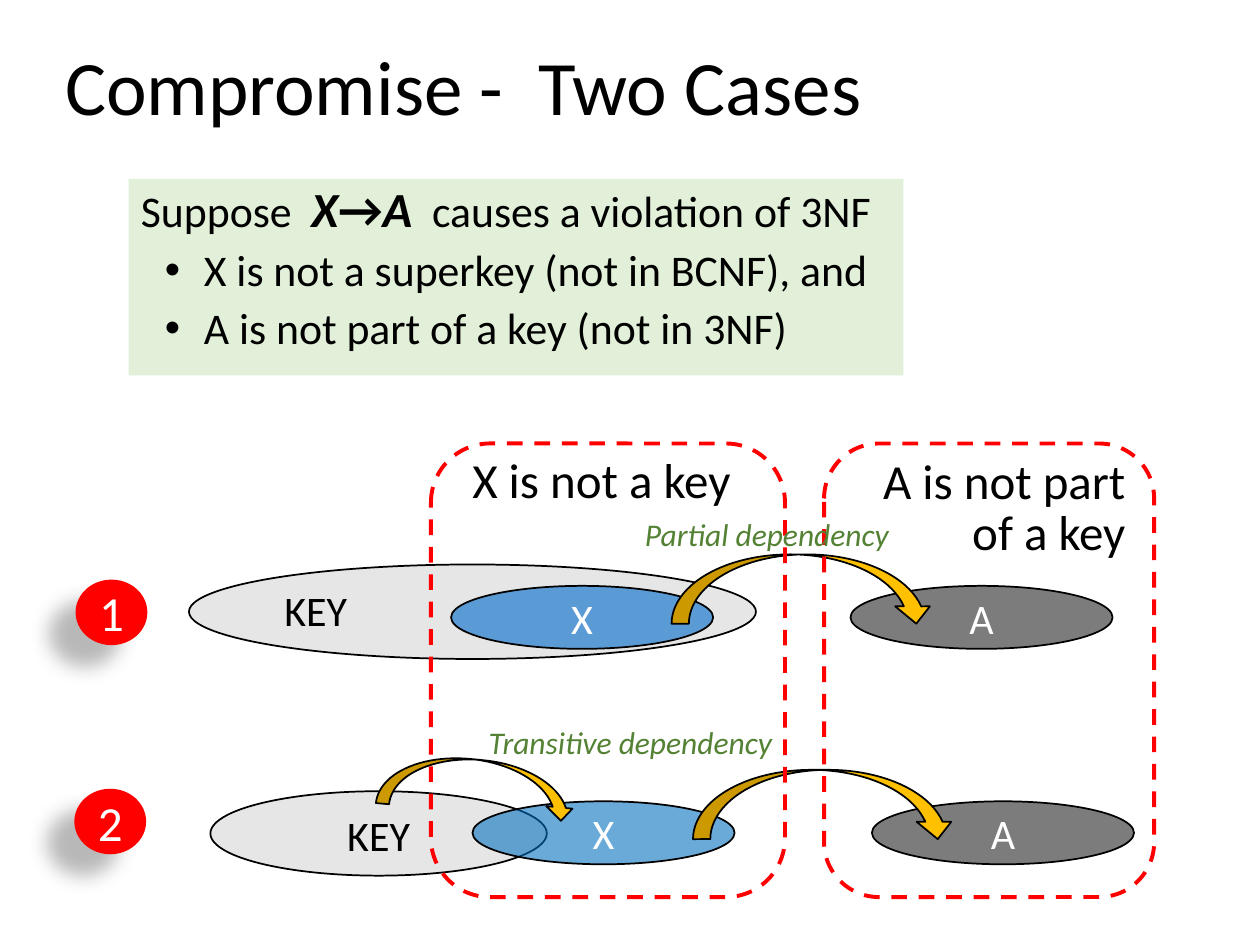
from dataclasses import dataclass

from lxml.etree import SubElement
from pptx import Presentation
from pptx.dml.color import RGBColor
from pptx.enum.dml import MSO_LINE
from pptx.enum.shapes import MSO_SHAPE
from pptx.enum.text import MSO_ANCHOR, PP_ALIGN
from pptx.oxml.ns import qn
from pptx.util import Inches, Pt


@dataclass(frozen=True)
class Theme:
    font: str = "Calibri"
    black: str = "000000"
    white: str = "FFFFFF"
    red: str = "FF0000"
    key: str = "E7E6E6"
    partial: str = "5B9BD5"
    transitive: str = "0070C0"
    attribute: str = "7C7C7C"
    arrow: str = "FFC000"
    panel: str = "E2F0D9"
    label: str = "548235"
    title_size: int = 44
    heading_size: int = 28
    body_size: int = 25
    node_size: int = 24
    label_size: int = 18


THEME = Theme()
TITLE = "Compromise -  Two Cases"
FORMULA = {"size": THEME.heading_size, "bold": True}
SUPPOSITION = [
    ("Suppose  ", {}),
    ("X", {**FORMULA, "italic": True}),
    ("→", FORMULA),
    ("A", {**FORMULA, "italic": True}),
    ("  ", {"italic": True}),
    ("causes a violation of 3NF", {}),
]
CONDITIONS = ["X is not a superkey (not in BCNF), and", "A is not part of a key (not in 3NF)"]
CASES = [
    {
        "number": "1",
        "badge": (0.6, 4.6),
        "key": (1.5, 4.48, 4.5, 0.75),
        "key_align": PP_ALIGN.LEFT,
        "fill": THEME.partial,
        "opacity": 100,
        "label": ("Partial dependency", (5.02, 4.04, 2.21, 0.4)),
        "key_arrow": None,
    },
    {
        "number": "2",
        "badge": (0.59, 6.26),
        "key": (1.67, 6.28, 2.67, 0.67),
        "key_align": PP_ALIGN.CENTER,
        "fill": THEME.transitive,
        "opacity": 59,
        "label": ("Transitive dependency", (3.78, 5.69, 2.48, 0.4)),
        "key_arrow": (3, 6.03, 1.58, 0.42),
    },
]
FRAMES = [
    {"box": (3.42, 3.52, 2.81, 3.6), "text": "X is not a key", "text_box": (3.65, 3.52, 2.27, 0.57),
     "format": {"wrap": False}},
    {"box": (6.54, 3.52, 2.62, 3.6), "text": "A is not part of a key", "text_box": (6.87, 3.59, 2.16, 0.92),
     "format": {"align": PP_ALIGN.RIGHT, "line_spacing": Pt(29)}},
]
NODE_LEFT, NODE_TOP = 3.58, 4.65
NODE_SIZE = (2.08, 0.5)
ARROW_SIZE = (2.08, 0.55)
ATTRIBUTE_STEP = 3.17
ARROW_SHIFT = (1.75, -0.25)
CASE_SHIFT = (0.17, 1.71)
BADGE_SIZE = (0.57, 0.52)


def write_text(shape, paragraphs, size=THEME.node_size, color=THEME.black, italic=False,
               align=PP_ALIGN.LEFT, anchor=MSO_ANCHOR.TOP, wrap=True, line_spacing=1.0, space_before=0):
    frame = shape.text_frame
    frame.word_wrap = wrap
    frame.vertical_anchor = anchor
    for index, runs in enumerate(paragraphs):
        paragraph = frame.paragraphs[0] if index == 0 else frame.add_paragraph()
        paragraph.alignment = align
        paragraph.line_spacing = line_spacing
        paragraph.space_before = Pt(space_before)
        for text, style in runs:
            run = paragraph.add_run()
            run.text = text
            run.font.name = THEME.font
            run.font.size = Pt(style.get("size", size))
            run.font.bold = style.get("bold", False)
            run.font.italic = style.get("italic", italic)
            run.font.color.rgb = RGBColor.from_string(color)


def plain(text):
    return [[(text, {})]]


def add_box(slide, box, text, **text_format):
    shape = slide.shapes.add_textbox(*map(Inches, box))
    write_text(shape, plain(text), **text_format)


def add_figure(slide, kind, box, fill=None, line=THEME.black, width=1, opacity=100):
    shape = slide.shapes.add_shape(kind, *map(Inches, box))
    shape.shadow.inherit = False
    if fill:
        shape.fill.solid()
        shape.fill.fore_color.rgb = RGBColor.from_string(fill)
    else:
        shape.fill.background()
    if opacity < 100:
        color = shape.fill._xPr.find(qn("a:solidFill"))[0]
        SubElement(color, qn("a:alpha"), val=str(opacity * 1000))
    if line:
        shape.line.color.rgb = RGBColor.from_string(line)
        shape.line.width = Pt(width)
    else:
        shape.line.fill.background()
    return shape


def add_arrow(slide, box, rotation=0):
    arrow = add_figure(slide, MSO_SHAPE.CURVED_DOWN_ARROW, box, THEME.arrow)
    for index, value in enumerate((0.25, 0.5, 0.25)):
        arrow.adjustments[index] = value
    arrow.rotation = rotation


def add_case(slide, case, index):
    left = NODE_LEFT + index * CASE_SHIFT[0]
    top = NODE_TOP + index * CASE_SHIFT[1]
    key = add_figure(slide, MSO_SHAPE.OVAL, case["key"], THEME.key)
    write_text(key, plain("KEY"), align=case["key_align"])
    nodes = [("X", left, case["fill"], case["opacity"]),
             ("A", left + ATTRIBUTE_STEP, THEME.attribute, 100)]
    for name, node_left, fill, opacity in nodes:
        node = add_figure(slide, MSO_SHAPE.OVAL, (node_left, top, *NODE_SIZE), fill, opacity=opacity)
        write_text(node, plain(name), color=THEME.white, align=PP_ALIGN.CENTER, anchor=MSO_ANCHOR.MIDDLE)
    add_arrow(slide, (left + ARROW_SHIFT[0], top + ARROW_SHIFT[1], *ARROW_SIZE))
    if case["key_arrow"]:
        add_arrow(slide, case["key_arrow"], 5.5)


def add_badge(slide, case):
    badge = add_figure(slide, MSO_SHAPE.OVAL, (*case["badge"], *BADGE_SIZE), THEME.red, line=None)
    write_text(badge, plain(case["number"]), size=THEME.heading_size, color=THEME.white,
               align=PP_ALIGN.CENTER, anchor=MSO_ANCHOR.MIDDLE, wrap=False)
    effects = badge._element.spPr.find(qn("a:effectLst"))
    shadow = SubElement(effects, qn("a:outerShdw"), blurRad=str(Pt(11.8)), dist=str(Pt(19.7)),
                        dir=str(141 * 60000), algn="ctr", rotWithShape="0")
    color = SubElement(shadow, qn("a:srgbClr"), val=THEME.black)
    SubElement(color, qn("a:alpha"), val="28000")


def add_panel(slide):
    panel = add_figure(slide, MSO_SHAPE.RECTANGLE, (1.02, 1.42, 6.15, 1.56), THEME.panel, line=None)
    conditions = [[(text, {})] for text in CONDITIONS]
    write_text(panel, [SUPPOSITION, *conditions], size=THEME.body_size, line_spacing=0.9, space_before=6)
    for paragraph in panel.text_frame.paragraphs[1:]:
        properties = paragraph._p.get_or_add_pPr()
        properties.set("marL", str(Inches(0.5)))
        properties.set("indent", str(Inches(-0.31)))
        bullet_color = SubElement(properties, qn("a:buClr"))
        SubElement(bullet_color, qn("a:srgbClr"), val=THEME.black)
        SubElement(properties, qn("a:buFont"), typeface="Arial")
        SubElement(properties, qn("a:buChar"), char="•")


def main():
    presentation = Presentation()
    presentation.slide_width, presentation.slide_height = Inches(10), Inches(7.5)
    slide = presentation.slides.add_slide(presentation.slide_layouts[6])
    add_box(slide, (0.42, 0.25, 8.5, 0.94), TITLE, size=THEME.title_size,
            anchor=MSO_ANCHOR.MIDDLE, line_spacing=0.9)
    for index, case in enumerate(CASES):
        add_case(slide, case, index)
    for frame in FRAMES:
        outline = add_figure(slide, MSO_SHAPE.ROUNDED_RECTANGLE, frame["box"], line=THEME.red, width=2.25)
        outline.line.dash_style = MSO_LINE.DASH
        add_box(slide, frame["text_box"], frame["text"], size=THEME.heading_size, **frame["format"])
    add_panel(slide)
    for case in CASES:
        add_badge(slide, case)
    for case in CASES:
        text, box = case["label"]
        add_box(slide, box, text, size=THEME.label_size, color=THEME.label, italic=True)
    presentation.save("out.pptx")


if __name__ == "__main__":
    main()
